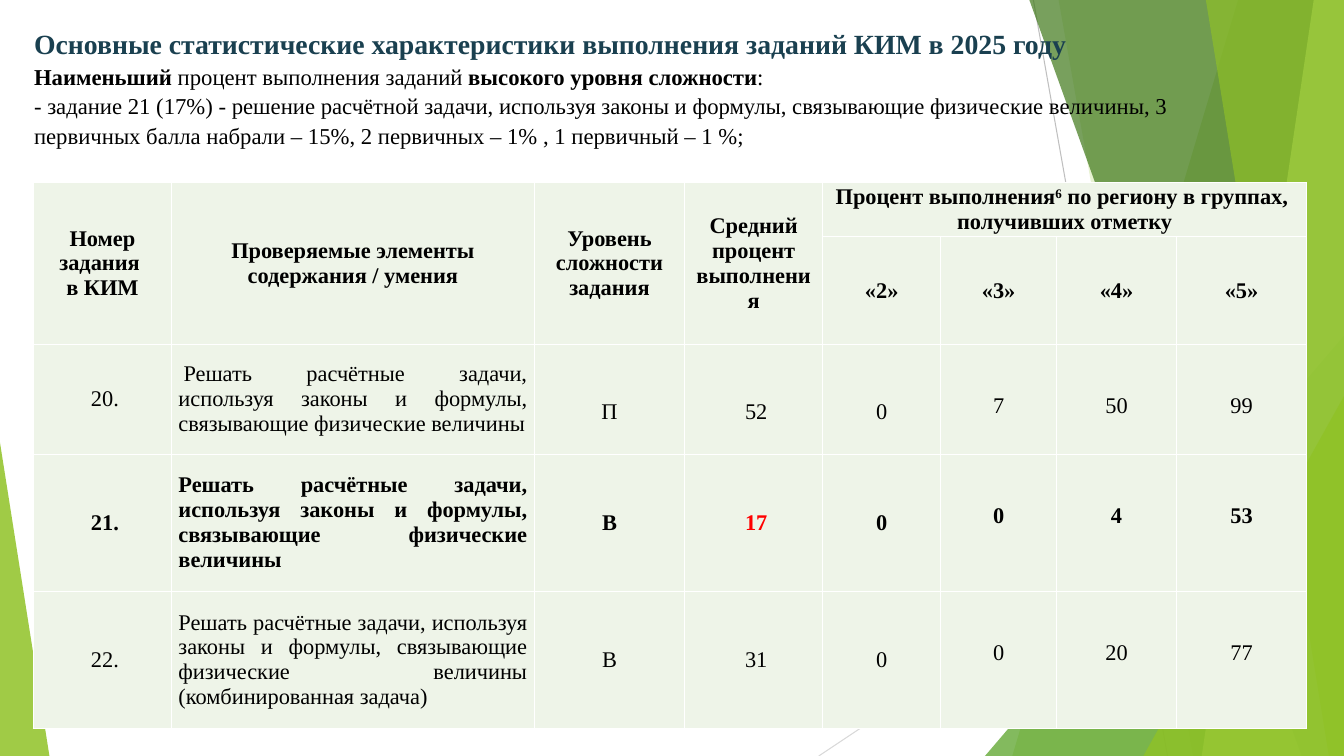
from collections import namedtuple

from lxml import etree
from pptx import Presentation, util as u
from pptx.dml.color import RGBColor
from pptx.enum import shapes, text
from pptx.oxml import ns

FONT = "Times New Roman"
WIDTH, HEIGHT = u.Inches(13.33), u.Inches(7.5)
Box = namedtuple("Box", "left top width height")
CENTER, JUSTIFY = text.PP_ALIGN.CENTER, text.PP_ALIGN.JUSTIFY

COLUMNS = [1.37, 3.6, 1.49, 1.37, 1.17, 1.15, 1.19, 1.29]
ROWS = [0.54, 0.99, 1.09, 1.36, 1.36]
INDENTS = [0.05, 0, -0.08, 0.05, 0, 0, 0, 0]
HEADINGS = ["Номер\nзадания \nв КИМ", "Проверяемые элементы содержания / умения",
            "Уровень сложности задания", "Средний процент выполнения"]
MARKS = ["«2»", "«3»", "«4»", "«5»"]
SKILL = "Решать расчётные задачи, используя законы и формулы, связывающие физические величины"
TASKS = [
    ["20.", SKILL, "П", "52", "0", "7", "50", "99"],
    ["21.", SKILL, "В", "17", "0", "0", "4", "53"],
    ["22.", SKILL + " (комбинированная задача)", "В", "31", "0", "0", "20", "77"],
]


def percent_box(left, top, width, height):
    """Box in EMU from percentages of the slide's width and height."""
    return Box(int(WIDTH * left / 100), int(HEIGHT * top / 100),
               int(WIDTH * width / 100), int(HEIGHT * height / 100))


def color(code):
    return RGBColor.from_string(code)


def paint(shape, code, opacity):
    shape.shadow.inherit = False
    shape.line.fill.background()
    shape.fill.solid()
    shape.fill.fore_color.rgb = color(code)
    srgb = shape.fill._xPr.find(".//" + ns.qn("a:srgbClr"))
    etree.SubElement(srgb, ns.qn("a:alpha")).set("val", str(opacity * 1000))


def add_span(para, words, size, bold=False, code="000000"):
    """Add a run, turning each newline into a line break."""
    for number, line in enumerate(words.split("\n")):
        if number:
            para.add_line_break()
        if line:
            span = para.add_run()
            span.text = line
            span.font.name, span.font.size = FONT, u.Pt(size)
            span.font.bold, span.font.color.rgb = bold, color(code)
    return span


def add_thin_line(page, box, start, end, code):
    """Line between two points given as percentages of the box."""
    points = [int(edge + side * share / 100)
              for point in (start, end)
              for edge, side, share in zip(box[:2], box[2:], point)]
    line = page.shapes.add_connector(shapes.MSO_CONNECTOR.STRAIGHT, *points)
    line.line.color.rgb, line.line.width = color(code), u.Pt(0.75)
    etree.SubElement(line._element.spPr, ns.qn("a:effectLst"))


def add_band(page, box, top_x, bottom_x, code, opacity):
    """Full-height band with a slanted left edge, reaching the right side."""
    right, bottom = box.left + box.width, box.top + box.height
    top_left, bottom_left = (int(box.left + box.width * x / 100) for x in (top_x, bottom_x))
    builder = page.shapes.build_freeform(top_left, box.top, scale=1.0)
    builder.add_line_segments([(right, box.top), (right, bottom), (bottom_left, bottom)])
    paint(builder.convert_to_shape(), code, opacity)


def add_corner(page, box, apex, code, opacity):
    corner = page.shapes.add_shape(shapes.MSO_SHAPE.ISOSCELES_TRIANGLE, *box)
    corner.adjustments[0] = apex
    paint(corner, code, opacity)


def add_backdrop(page, box):
    add_thin_line(page, box, (76.89, 0), (86.87, 100), "BFBFBF")
    add_thin_line(page, box, (100, 53.73), (60.92, 100), "D9D9D9")
    add_band(page, box, 92.12, 75.32, "90C226", 30)
    add_band(page, box, 78.77, 88.75, "90C226", 20)
    add_corner(page, percent_box(73.29, 44.4, 26.71, 55.6), 1, "54A021", 72)
    add_band(page, box, 76.59, 96.85, "3F7819", 70)
    add_band(page, box, 97.75, 89.42, "C0E474", 70)
    add_band(page, box, 89.72, 98.87, "90C226", 65)
    add_corner(page, percent_box(85.07, 52.4, 14.93, 47.6), 1, "90C226", 80)
    add_corner(page, percent_box(0, 58.53, 3.68, 41.47), 0, "90C226", 85)


def add_title(page, box):
    frame = page.shapes.add_textbox(*box).text_frame
    frame.word_wrap = True
    para = frame.paragraphs[0]
    para.line_spacing = 1.1
    add_span(para, "Основные статистические характеристики выполнения заданий КИМ в 2025 году\n",
             19.8, True, "1A4050")
    add_span(para, "Наименьший ", 16.2, True)
    add_span(para, "процент выполнения заданий ", 16.2)
    add_span(para, "высокого уровня сложности", 16.2, True)
    add_span(para, ":\n- задание 21 (17%) - решение расчётной задачи, используя законы и формулы, "
             "связывающие физические величины, 3 первичных балла набрали – 15%, "
             "2 первичных – 1% , 1 первичный – 1 %;", 16.2)


def style_cell(cell):
    properties = cell._tc.get_or_add_tcPr()
    for side in ("lnL", "lnR", "lnT", "lnB"):
        border = etree.SubElement(properties, ns.qn("a:" + side), w=str(u.Pt(1)))
        fill = etree.SubElement(border, ns.qn("a:solidFill"))
        etree.SubElement(fill, ns.qn("a:srgbClr"), val="FFFFFF")
    cell.fill.solid()
    cell.fill.fore_color.rgb = color("EEF4E8")
    cell.vertical_anchor = text.MSO_ANCHOR.MIDDLE
    cell.margin_left = cell.margin_right = u.Inches(0.07)
    cell.margin_top = cell.margin_bottom = 0


def write_cell(cell, words, bold, code="000000", align=CENTER, indent=0):
    para = cell.text_frame.paragraphs[0]
    para.alignment = align
    if indent:
        para._p.get_or_add_pPr().set("indent", str(u.Inches(indent)))
    add_span(para, words, 16, bold, code)
    return para


def write_header(table):
    for column, heading in enumerate(HEADINGS):
        table.cell(0, column).merge(table.cell(1, column))
        write_cell(table.cell(0, column), heading, True)
    first = len(HEADINGS)
    group = table.cell(0, first)
    group.merge(table.cell(0, len(COLUMNS) - 1))
    para = write_cell(group, "Процент выполнения", True)
    note = add_span(para, "6", 16, True)
    note._r.get_or_add_rPr().set("baseline", "30000")
    add_span(para, " по региону в группах, \nполучивших отметку", 16, True)
    for column, mark in enumerate(MARKS, first):
        write_cell(table.cell(1, column), mark, True)


def write_tasks(table):
    for row, task in enumerate(TASKS, 2):
        first_row, hardest = row == 2, task[0] == "21."
        for column, words in enumerate(task):
            cell = table.cell(row, column)
            indent = 0.05 if first_row and column == 1 else INDENTS[column]
            write_cell(cell, words, hardest,
                       "FF0000" if hardest and column == 3 else "000000",
                       JUSTIFY if column == 1 else CENTER, indent)
            if column > 4:
                cell.vertical_anchor = text.MSO_ANCHOR.TOP
                cell.margin_top = u.Inches(0.49)
            elif first_row and column > 1:
                cell.margin_top = u.Inches(0.25)


def add_results(page, box):
    table = page.shapes.add_table(len(ROWS), len(COLUMNS), *box).table
    table.first_row = table.horz_banding = False
    for column, share in zip(table.columns, COLUMNS):
        column.width = int(box.width * share / sum(COLUMNS))
    for row, share in zip(table.rows, ROWS):
        row.height = int(box.height * share / sum(ROWS))
    for cell in table.iter_cells():
        style_cell(cell)
    write_header(table)
    write_tasks(table)


def main():
    deck = Presentation()
    deck.slide_width, deck.slide_height = WIDTH, HEIGHT
    page = deck.slides.add_slide(deck.slide_layouts[6])
    add_backdrop(page, percent_box(0, 0, 100, 100))
    add_title(page, percent_box(1.8, 2.4, 91.15, 19.2))
    add_results(page, percent_box(2.48, 24.13, 94.75, 71.2))
    deck.save("out.pptx")


if __name__ == "__main__":
    main()
